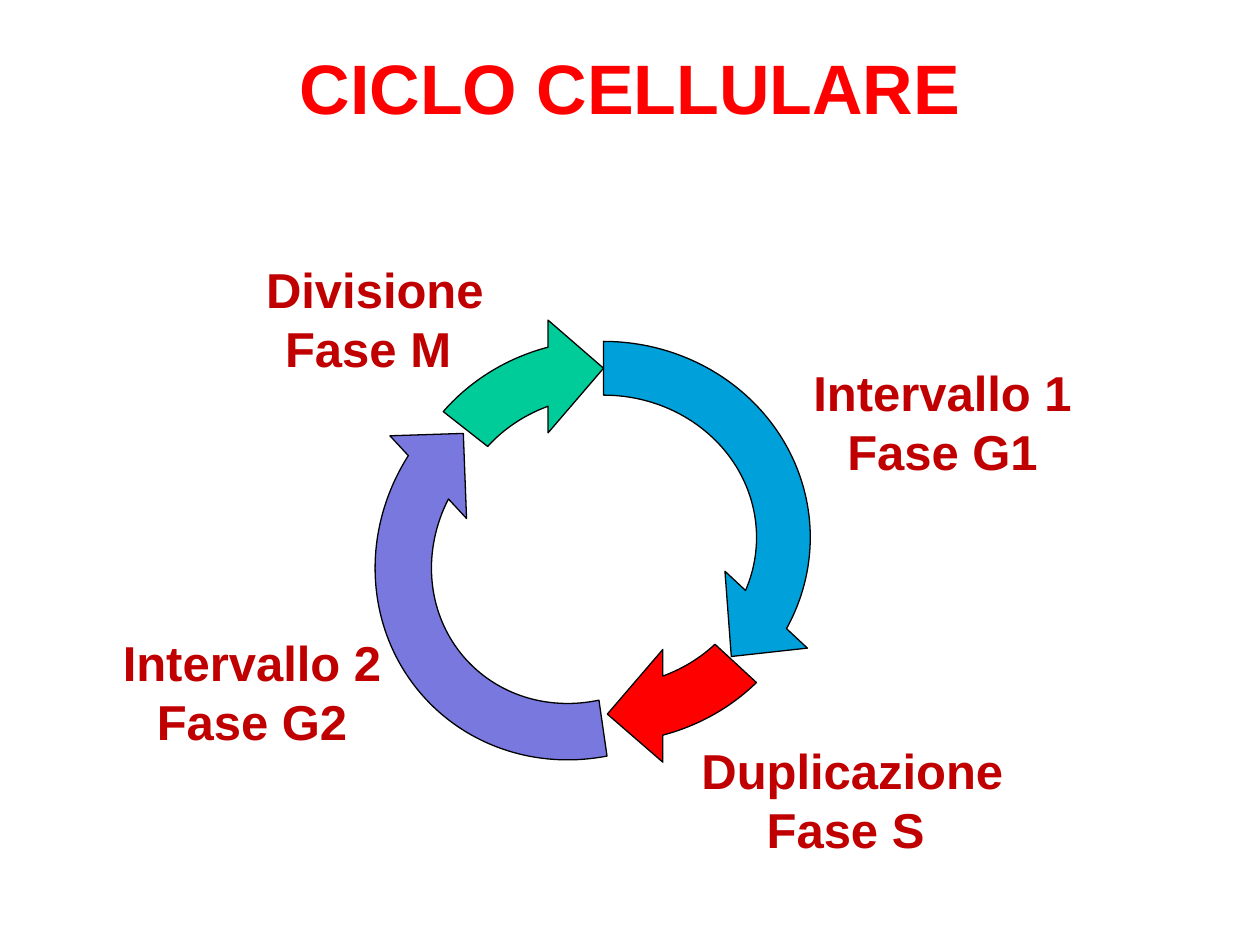
from dataclasses import dataclass

from pptx import Presentation
from pptx import util as u
from pptx.dml import color
from pptx.enum import shapes, text


@dataclass(frozen=True)
class Theme:
    font: str = "Arial"
    title_size: int = 40
    label_size: int = 28
    line_width: float = 0.75
    title: str = "FF0000"
    label: str = "C00000"
    outline: str = "000000"
    interval_1: str = "00A1DA"
    duplication: str = "FF0000"
    interval_2: str = "7878DE"
    division: str = "00CC99"


@dataclass(frozen=True)
class Label:
    wording: str
    left: float
    top: float
    width: float
    height: float = 1.04


@dataclass(frozen=True)
class PhaseArrow:
    fill: str
    left: float
    top: float
    end_angle: float
    start_angle: float
    rotation: float = 90
    flipped: bool = False
    thickness: float = 0.125


THEME = Theme()
ARROW_WIDTH, ARROW_HEIGHT = 3.58, 3.75
HEAD_ANGLE, HEAD_WIDTH = 11.42, 0.125

TITLE = Label("CICLO CELLULARE", 2.25, 0.3, 5.5, 0.77)
LABELS = [
    Label("Duplicazione\nFase S ", 5.45, 5.83, 2.63),
    Label("Divisione\nFase M ", 2, 2.01, 1.95),
    Label("Intervallo 1\nFase G1", 6.34, 2.83, 2.28),
    Label("Intervallo 2\nFase G2", 0.86, 4.97, 2.28),
]
ARROWS = [
    PhaseArrow(THEME.interval_1, 3, 2.39, 176.38, 108, thickness=0.119),
    PhaseArrow(THEME.division, 3, 2.39, 204.58, 184.87, flipped=True),
    PhaseArrow(THEME.duplication, 3.03, 2.45, 204.58, 187.62),
    PhaseArrow(THEME.interval_2, 2.8, 2.55, 204.58, 128.74, 47.2, True),
]


def rgb(value: str) -> color.RGBColor:
    return color.RGBColor.from_string(value)


def draw_label(slide, label: Label, size: int, font_color: str) -> None:
    shape = slide.shapes.add_textbox(
        u.Inches(label.left), u.Inches(label.top),
        u.Inches(label.width), u.Inches(label.height),
    )
    frame = shape.text_frame
    frame.text = label.wording
    frame.word_wrap = False
    frame.auto_size = text.MSO_AUTO_SIZE.SHAPE_TO_FIT_TEXT
    for paragraph in frame.paragraphs:
        paragraph.alignment = text.PP_ALIGN.CENTER
        for run in paragraph.runs:
            run.font.name = THEME.font
            run.font.size = u.Pt(size)
            run.font.bold = True
            run.font.color.rgb = rgb(font_color)


def draw_arrow(slide, arrow: PhaseArrow) -> None:
    shape = slide.shapes.add_shape(
        shapes.MSO_SHAPE.CIRCULAR_ARROW,
        u.Inches(arrow.left), u.Inches(arrow.top),
        u.Inches(ARROW_WIDTH), u.Inches(ARROW_HEIGHT),
    )
    adjustments = (arrow.thickness, HEAD_ANGLE, arrow.end_angle,
                   arrow.start_angle, HEAD_WIDTH)
    for index, value in enumerate(adjustments):
        shape.adjustments[index] = value
    shape.rotation = arrow.rotation
    if arrow.flipped:
        transform = shape.element.spPr.xfrm
        transform.set("flipH", "1")
        transform.set("flipV", "1")
    shape.shadow.inherit = False
    shape.fill.solid()
    shape.fill.fore_color.rgb = rgb(arrow.fill)
    shape.line.color.rgb = rgb(THEME.outline)
    shape.line.width = u.Pt(THEME.line_width)


def main() -> None:
    presentation = Presentation()
    presentation.slide_width = u.Inches(10)
    presentation.slide_height = u.Inches(7.5)
    slide = presentation.slides.add_slide(presentation.slide_layouts[6])
    draw_label(slide, TITLE, THEME.title_size, THEME.title)
    slide.shapes[0].text_frame.vertical_anchor = text.MSO_ANCHOR.MIDDLE
    for arrow in ARROWS:
        draw_arrow(slide, arrow)
    for label in LABELS:
        draw_label(slide, label, THEME.label_size, THEME.label)
    presentation.save("out.pptx")


if __name__ == "__main__":
    main()
